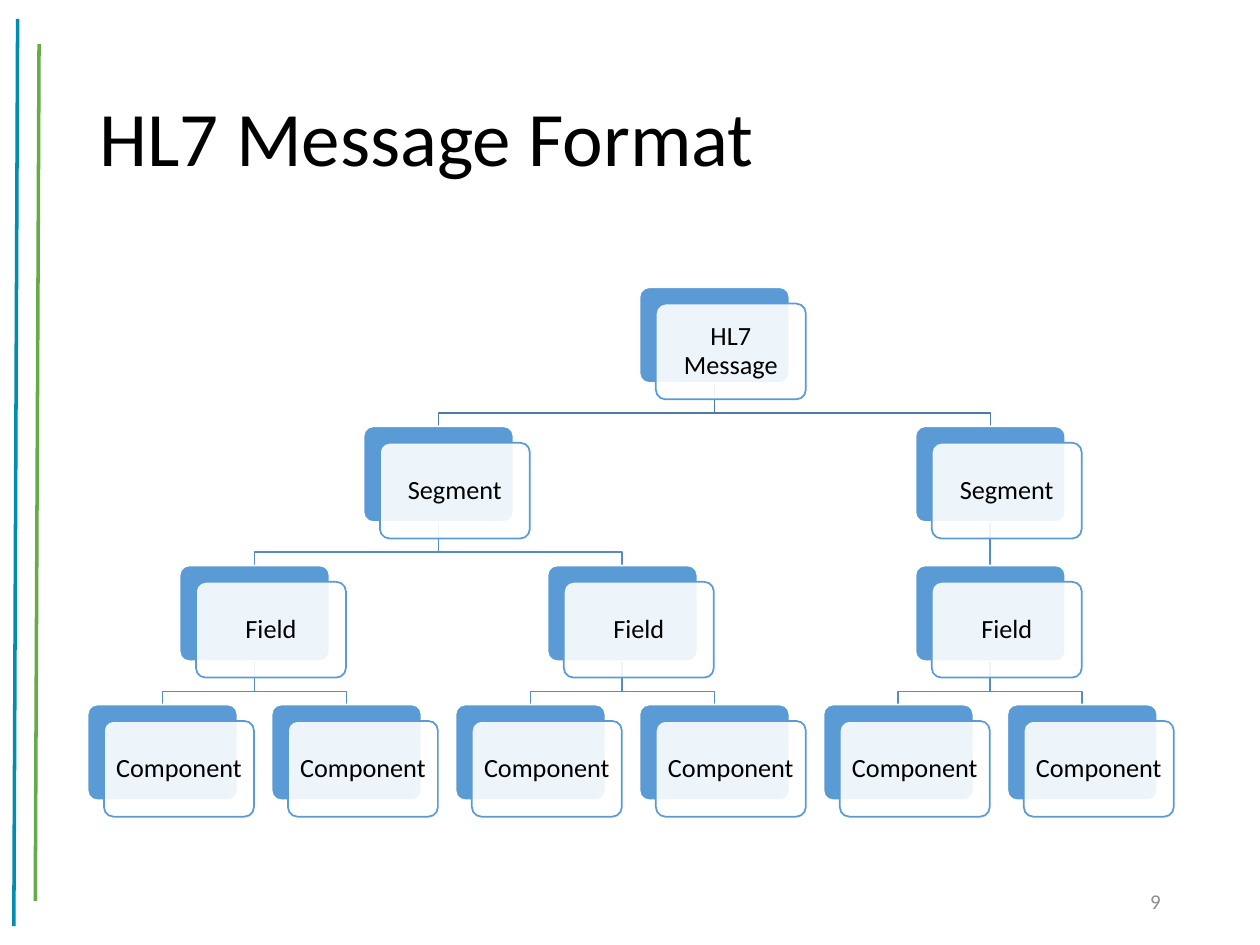
from lxml.etree import SubElement as Sub
from pptx import Presentation
from pptx.dml.color import RGBColor as RGB
from pptx.enum.shapes import MSO_CONNECTOR as LINK, MSO_SHAPE as SHAPE
from pptx.enum.text import MSO_ANCHOR as ANCHOR, PP_ALIGN as ALIGN
from pptx.oxml.ns import qn
from pptx.util import Inches as In, Pt

BLUE = RGB(0x5B, 0x9B, 0xD5)
MID = RGB(0x53, 0x8D, 0xC1)
DARK = RGB(0x49, 0x7C, 0xAB)
TEAL = RGB(0x00, 0x8E, 0xB0)
GREEN = RGB(0x64, 0xAD, 0x45)
GREY = RGB(0x8C, 0x8C, 0x8C)
WHITE = RGB(0xFF, 0xFF, 0xFF)
BLACK = RGB(0, 0, 0)

TITLE = "HL7 Message Format"
PAGE = "9"
PART = ("Component", [])
FIELD = ("Field", [PART, PART])
TREE = ("HL7 Message", [("Segment", [FIELD, FIELD]), ("Segment", [FIELD])])
RULES = [(0.14, 0.15, 0.11, 7.35, TEAL), (0.31, 0.35, 0.28, 7.15, GREEN)]

WIDE, HIGH = 10, 7.5
LEFT, TOP = 1.29, 2.28
COL, ROW = 1.46, 1.104
CARD_W, CARD_H = 1.19, 0.76
SHIFT = 0.13
DROP = 0.24

deck = Presentation()
deck.slide_width, deck.slide_height = In(WIDE), In(HIGH)
slide = deck.slides.add_slide(deck.slide_layouts[6])
shapes = slide.shapes


def write(shape, text, size, color=BLACK, align=ALIGN.LEFT, inset=(0.1, 0.05), space=1):
    frame = shape.text_frame
    frame.word_wrap = True
    frame.vertical_anchor = ANCHOR.MIDDLE
    frame.margin_left = frame.margin_right = In(inset[0])
    frame.margin_top = frame.margin_bottom = In(inset[1])
    para = frame.paragraphs[0]
    para.text = text
    para.alignment = align
    para.line_spacing = space
    font = para.font
    font.name, font.size, font.color.rgb = "Calibri", Pt(size), color


def label(x, y, w, h, text, size, **form):
    write(shapes.add_textbox(In(x), In(y), In(w), In(h)), text, size, **form)


def rule(x1, y1, x2, y2, color):
    line = shapes.add_connector(LINK.STRAIGHT, In(x1), In(y1), In(x2), In(y2))
    line.line.color.rgb, line.line.width = color, Pt(2)
    Sub(line._element.spPr, qn("a:effectLst"))


def card(x, y, fill, edge):
    box = shapes.add_shape(SHAPE.ROUNDED_RECTANGLE, In(x), In(y), In(CARD_W), In(CARD_H))
    box.adjustments[0] = 0.1
    box.shadow.inherit = False
    box.fill.solid()
    box.fill.fore_color.rgb = fill
    box.line.color.rgb, box.line.width = edge, Pt(1)
    return box


def node(x, y, text):
    card(x - CARD_W / 2, y, BLUE, WHITE)
    front = card(x - CARD_W / 2 + SHIFT, y + SHIFT, WHITE, BLUE)
    tint = front._element.spPr.find(qn("a:solidFill"))[0]
    Sub(tint, qn("a:alpha"), val="90000")
    write(front, text, 15, align=ALIGN.CENTER, inset=(0.06, 0.06), space=0.9)


def link(x1, y1, x2, y2, color):
    bend = y1 + DROP
    path = shapes.build_freeform(In(x1), In(y1), scale=1.0)
    stops = [(x1, bend), (x2, bend), (x2, y2)] if x1 != x2 else [(x2, y2)]
    path.add_line_segments([(In(x), In(y)) for x, y in stops], close=False)
    line = path.convert_to_shape()
    line.shadow.inherit = False
    line.fill.background()
    line.line.color.rgb, line.line.width = color, Pt(1)


def place(tree, level=0, start=0):
    text, kids = tree
    y = TOP + level * ROW
    if not kids:
        return LEFT + start * COL, 1, [(LEFT + start * COL, y, text)], []
    nodes, links, mids, span = [], [], [], 0
    for kid in kids:
        mid, width, below, lines = place(kid, level + 1, start + span)
        mids.append(mid)
        nodes += below
        links += lines
        span += width
    x = (mids[0] + mids[-1]) / 2
    color = MID if level else DARK
    links += [(x, y + CARD_H, mid, y + ROW, color) for mid in mids]
    return x, span, [(x, y, text)] + nodes, links


for item in RULES:
    rule(*item)
label(0.69, 0.4, 8.62, 1.45, TITLE, 44, space=0.9)
_, _, nodes, links = place(TREE)
for item in links:
    link(*item)
for item in nodes:
    node(*item)
label(7.06, 6.95, 2.25, 0.4, PAGE, 12, color=GREY, align=ALIGN.RIGHT)

deck.save("out.pptx")
